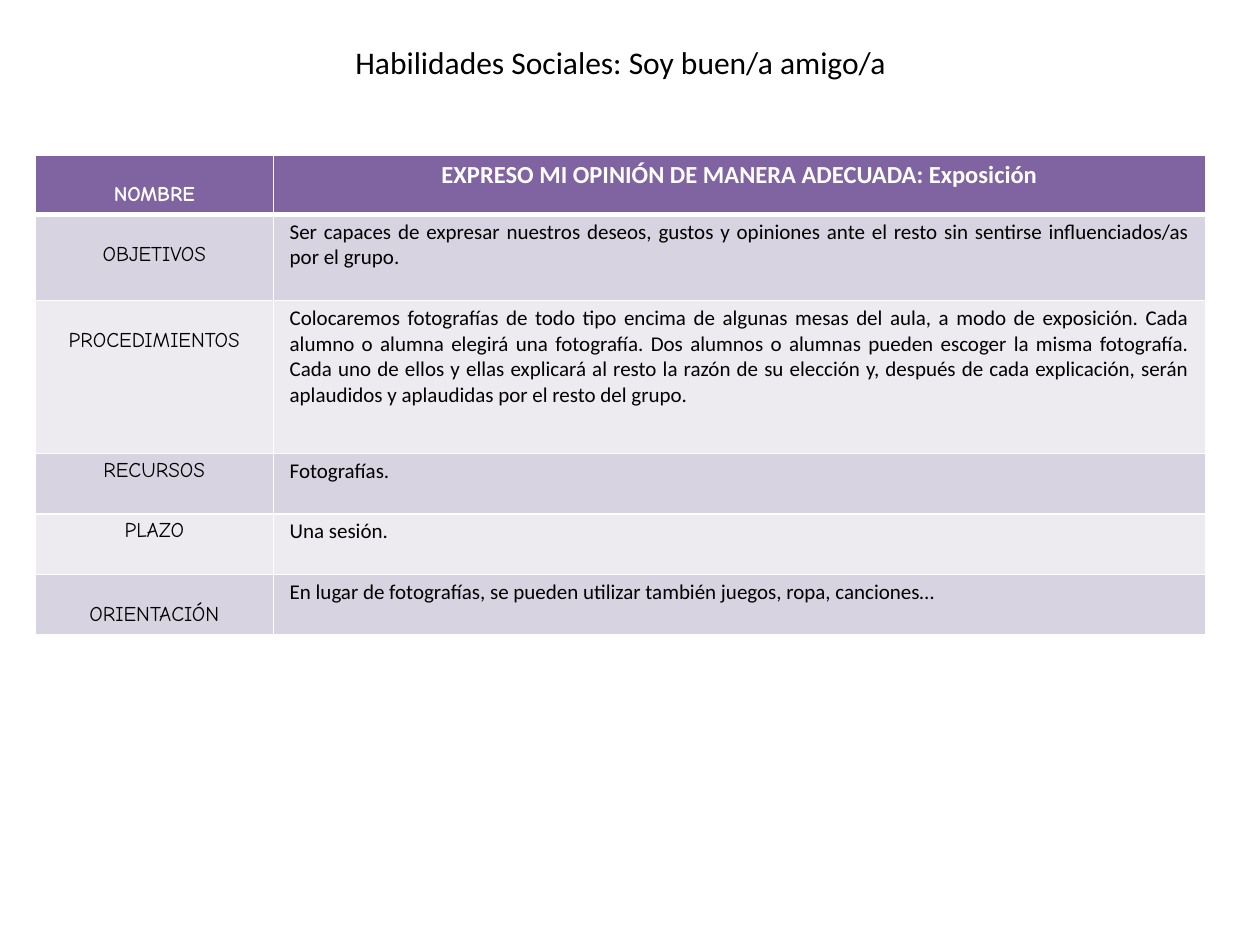
from lxml.etree import SubElement as Sub
from pptx import Presentation
from pptx.dml.color import RGBColor
from pptx.enum.text import MSO_ANCHOR as Anchor, MSO_AUTO_SIZE as Fit, PP_ALIGN as Align
from pptx.oxml.ns import qn
from pptx.util import Cm, Pt


def tint(item, code):
    item.rgb = RGBColor.from_string(code)


def write(frame, text, align, color, **form):
    para = frame.paragraphs[0]
    para.alignment = align
    run = para.add_run()
    run.text = text
    for key, value in form.items():
        setattr(run.font, key, value)
    tint(run.font.color, color)


deck = Presentation()
deck.slide_width, deck.slide_height = Cm(25.4), Cm(19.05)
slide = deck.slides.add_slide(deck.slide_layouts[5])

title = slide.shapes.title
title.left, title.top, title.width, title.height = Cm(6.91), Cm(0.74), Cm(12.19), Cm(1.02)
title.text_frame.auto_size = Fit.SHAPE_TO_FIT_TEXT
write(title.text_frame, "Habilidades Sociales: Soy buen/a amigo/a", Align.LEFT, "000000",
      name="Calibri", size=Pt(18), bold=False)

rows = [
    ("NOMBRE", "EXPRESO MI OPINIÓN DE MANERA ADECUADA: Exposición", 1.2, True),
    ("OBJETIVOS", "Ser capaces de expresar nuestros deseos, gustos y opiniones ante el resto "
     "sin sentirse influenciados/as por el grupo.", 1.74, True),
    ("PROCEDIMIENTOS", "Colocaremos fotografías de todo tipo encima de algunas mesas del aula, "
     "a modo de exposición. Cada alumno o alumna elegirá una fotografía. Dos alumnos o alumnas "
     "pueden escoger la misma fotografía. Cada uno de ellos y ellas explicará al resto la razón "
     "de su elección y, después de cada explicación, serán aplaudidos y aplaudidas por el resto "
     "del grupo.", 3.08, True),
    ("RECURSOS", "Fotografías.", 1.22, False),
    ("PLAZO", "Una sesión.", 1.22, False),
    ("ORIENTACIÓN", "En lugar de fotografías, se pueden utilizar también juegos, ropa, "
     "canciones…", 1.22, True),
]
wide = [4.8, 18.8]
high = sum(row[2] for row in rows)
table = slide.shapes.add_table(len(rows), 2, Cm(0.71), Cm(3.12), Cm(sum(wide)), Cm(high)).table
for col, width in zip(table.columns, wide):
    col.width = Cm(width)

for r, (label, body, height, low) in enumerate(rows):
    table.rows[r].height = Cm(height)
    head = r == 0
    fill = "8064A2" if head else ("EDEAF0", "D8D3E0")[r % 2]
    for c, text in enumerate((label, body)):
        cell = table.cell(r, c)
        top = 0.57 if low and c == 0 else 0.1
        form = {"margin_left": Cm(0.33), "margin_right": Cm(0.33), "margin_top": Cm(top),
                "margin_bottom": Cm(0.1), "vertical_anchor": Anchor.TOP}
        for key, value in form.items():
            setattr(cell, key, value)
        props = cell._tc.get_or_add_tcPr()
        for side in "LRTB":
            thick = (side, r) in (("B", 0), ("T", 1))
            line = Sub(props, qn(f"a:ln{side}"), w=str(Pt(3 if thick else 1)))
            Sub(Sub(line, qn("a:solidFill")), qn("a:srgbClr"), val="FFFFFF")
        cell.fill.solid()
        tint(cell.fill.fore_color, fill)
        write(cell.text_frame, text, Align.CENTER if head or c == 0 else Align.JUSTIFY,
              "FFFFFF" if head else "000000", name=("Comic Neue", "Calibri")[c],
              size=Pt(14 if head and c else 12), bold=head)

deck.save("out.pptx")
